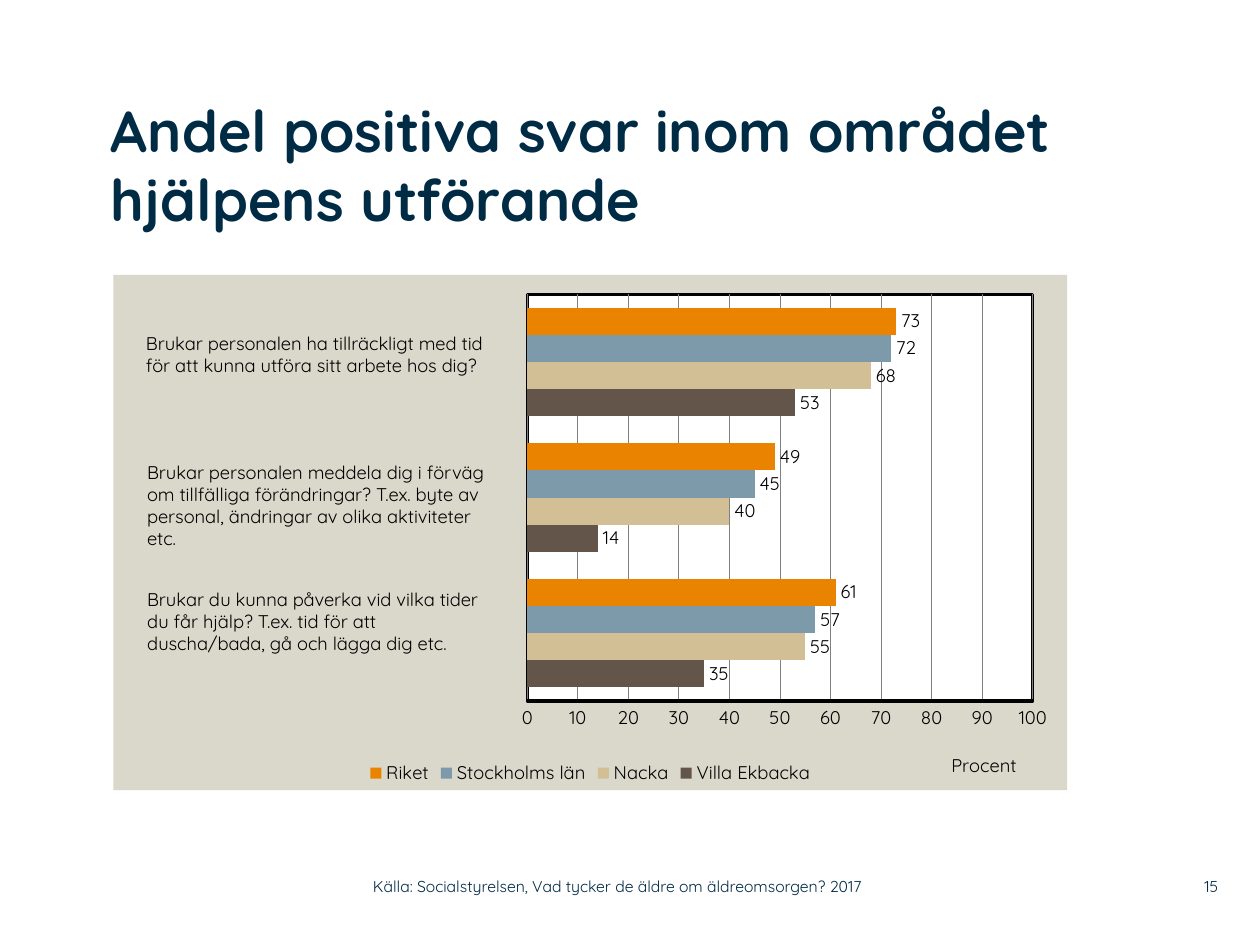
from pptx import Presentation
from pptx import util as u
from pptx.chart.data import CategoryChartData
from pptx.dml.color import RGBColor
from pptx.enum import chart as charts, text
from pptx.oxml import parse_xml
from pptx.oxml.ns import nsdecls, qn

Pt = u.Pt
FONT = "Quicksand"
NAVY = "002B45"
BLACK = "000000"


def style(font, size, color=BLACK, bold=False):
    font.name = FONT
    font.size = Pt(size)
    font.bold = bold
    font.color.rgb = RGBColor.from_string(color)


def write(shape, lines, size, color, bold=False, margins=(0, 0)):
    frame = shape.text_frame
    frame.word_wrap = True
    frame.auto_size = text.MSO_AUTO_SIZE.NONE
    frame.margin_left = frame.margin_right = Pt(margins[0])
    frame.margin_top = frame.margin_bottom = Pt(margins[1])
    for index, line in enumerate(lines):
        paragraph = frame.add_paragraph() if index else frame.paragraphs[0]
        run = paragraph.add_run()
        run.text = line
        style(run.font, size, color, bold)
    return frame


presentation = Presentation()
presentation.slide_width, presentation.slide_height = Pt(720), Pt(540)
slide = presentation.slides.add_slide(presentation.slide_layouts[5])

# Title
title = slide.shapes.title
title.left, title.top, title.width, title.height = Pt(63.4), Pt(54), Pt(547.2), Pt(102.2)
frame = write(title, ["Andel positiva svar inom området hjälpens utförande"], 33, NAVY, True)
frame.vertical_anchor = text.MSO_ANCHOR.TOP
frame.paragraphs[0].alignment = text.PP_ALIGN.LEFT

# Chart data, listed from the bottom bar upwards
series_data = [
    ("Villa Ekbacka", (35, 14, 53), "635549"),
    ("Nacka", (55, 40, 68), "D3BF96"),
    ("Stockholms län", (57, 45, 72), "7D9AAA"),
    ("Riket", (61, 49, 73), "E98300"),
]
chart_data = CategoryChartData()
chart_data.categories = ["1", "2", "3"]
for name, values, color in series_data:
    chart_data.add_series(name, values)
chart = slide.shapes.add_chart(
    charts.XL_CHART_TYPE.BAR_CLUSTERED, Pt(64.8), Pt(157), Pt(545), Pt(294.5), chart_data
).chart
chart.has_title = False
style(chart.font, 10.5)

# Bars and value labels
plot = chart.plots[0]
plot.gap_width = 100
plot.overlap = 0
plot.vary_by_categories = False
for series, (name, values, color) in zip(plot.series, series_data):
    series.format.fill.solid()
    series.format.fill.fore_color.rgb = RGBColor.from_string(color)
    labels = series.data_labels
    labels.show_value = True
    labels.position = charts.XL_LABEL_POSITION.OUTSIDE_END
    style(labels.font, 10.5)

# Axes
chart.category_axis.visible = False
axis = chart.value_axis
axis.minimum_scale, axis.maximum_scale, axis.major_unit = 0, 100, 10
axis.major_tick_mark = axis.minor_tick_mark = charts.XL_TICK_MARK.NONE
axis.format.line.width = Pt(2)
axis.format.line.color.rgb = RGBColor.from_string(BLACK)
axis.has_major_gridlines = True
axis.major_gridlines.format.line.width = Pt(0.5)
axis.major_gridlines.format.line.color.rgb = RGBColor.from_string("808080")
style(axis.tick_labels.font, 10.5)
run = axis.axis_title.text_frame.paragraphs[0].add_run()
run.text = "Procent"
style(run.font, 10.5)

# Legend
chart.has_legend = True
chart.legend.position = charts.XL_LEGEND_POSITION.BOTTOM
chart.legend.include_in_layout = False
style(chart.legend.font, 10.5)

# Manual places of the plot area and the axis title
chart_space = chart.element
plot_area = chart_space.find(".//" + qn("c:plotArea"))
axis_title = plot_area.find(".//" + qn("c:title"))
plot_layout = [("layoutTarget", "inner"), ("xMode", "edge"), ("yMode", "edge"),
               ("x", 0.434), ("y", 0.038), ("w", 0.53), ("h", 0.789)]
title_layout = [("xMode", "edge"), ("yMode", "edge"), ("x", 0.875), ("y", 0.92)]
for parent, index, settings in ((plot_area, 0, plot_layout), (axis_title, 1, title_layout)):
    for old in parent.findall(qn("c:layout")):
        parent.remove(old)
    items = "".join(f'<c:{key} val="{value}"/>' for key, value in settings)
    parent.insert(index, parse_xml(
        f'<c:layout {nsdecls("c")}><c:manualLayout>{items}</c:manualLayout></c:layout>'))

# Backgrounds of the chart and the plot area
white_plot, beige_chart = [
    parse_xml(f'<c:spPr {nsdecls("c", "a")}><a:solidFill><a:srgbClr val="{fill}"/></a:solidFill>'
              f'{line}</c:spPr>')
    for fill, line in (
        ("FFFFFF", '<a:ln w="25400"><a:solidFill><a:srgbClr val="000000"/></a:solidFill></a:ln>'),
        ("DAD7CB", "<a:ln><a:noFill/></a:ln>"),
    )
]
plot_area.append(white_plot)
chart_space.find(qn("c:chart")).addnext(beige_chart)

# Questions beside the bars
questions = [
    (76.3, 186.5, 215.3, 32.4, ["Brukar personalen ha tillräckligt med tid",
                                "för att kunna utföra sitt arbete hos dig?"]),
    (77, 260, 213.8, 58.3, ["Brukar personalen meddela dig i förväg om tillfälliga förändringar? "
                            "T.ex. byte av personal, ändringar av olika aktiviteter etc."]),
    (77, 332.6, 213.8, 45.4, ["Brukar du kunna påverka vid vilka tider",
                              "du får hjälp? T.ex. tid för att",
                              "duscha/bada, gå och lägga dig etc."]),
]
for left, top, width, height, lines in questions:
    box = slide.shapes.add_textbox(Pt(left), Pt(top), Pt(width), Pt(height))
    write(box, lines, 10.5, BLACK, margins=(7.2, 3.6))

# Source and page number
footers = [
    (213.1, 319, "Källa: Socialstyrelsen, Vad tycker de äldre om äldreomsorgen? 2017",
     text.PP_ALIGN.LEFT),
    (662.4, 33.8, "15", text.PP_ALIGN.RIGHT),
]
for left, width, line, alignment in footers:
    box = slide.shapes.add_textbox(Pt(left), Pt(496.1), Pt(width), Pt(20.9))
    frame = write(box, [line], 9, NAVY)
    frame.vertical_anchor = text.MSO_ANCHOR.MIDDLE
    frame.paragraphs[0].alignment = alignment

presentation.save("out.pptx")
